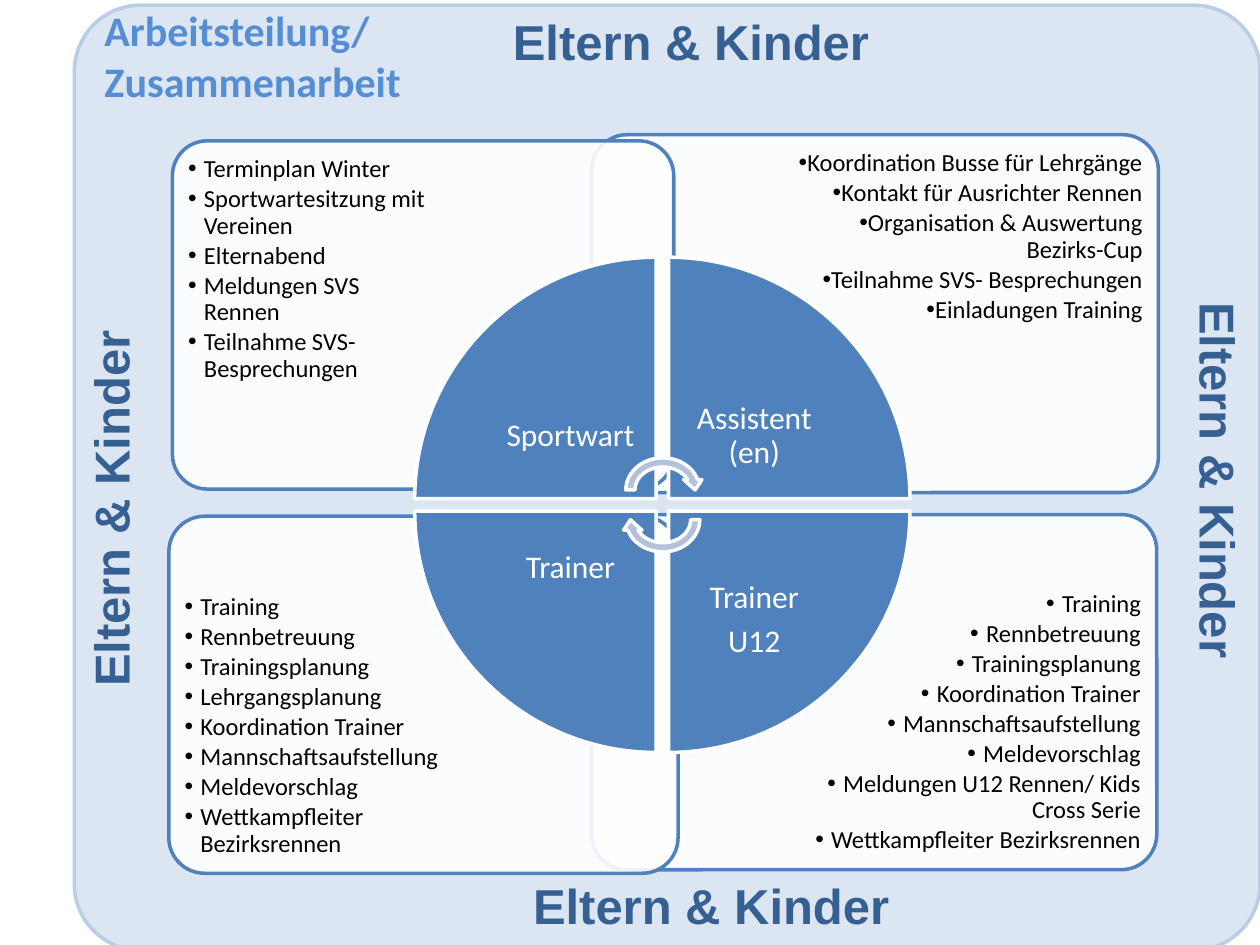
from lxml import etree
from pptx import Presentation
from pptx.dml.color import RGBColor
from pptx.enum import shapes, text
from pptx.oxml import ns
from pptx.util import Pt

# Content
TITLE = "Arbeitsteilung/\vZusammenarbeit"
BORDER = "Eltern & Kinder"
# left, top, width, height, rotation
EDGES = [
    (286, 3, 220, 44, 0),
    (-54, 262, 234, 41, 270),
    (579.5, 262, 234, 41, 90),
    (297.5, 497, 220, 44, 0),
]
# panel box, on the right, at the bottom, first-line indent, list
PANELS = [
    ((338, 294, 323, 203), True, True, -9, [
        "Training", "Rennbetreuung", "Trainingsplanung",
        "Koordination Trainer", "Mannschaftsaufstellung", "Meldevorschlag",
        "Meldungen U12 Rennen/ Kids Cross Serie",
        "Wettkampfleiter Bezirksrennen"]),
    ((96.5, 295, 291, 204), False, True, -9, [
        "Training", "Rennbetreuung", "Trainingsplanung", "Lehrgangsplanung",
        "Koordination Trainer", "Mannschaftsaufstellung", "Meldevorschlag",
        "Wettkampfleiter Bezirksrennen"]),
    ((338, 77, 324, 204.5), True, False, 0, [
        "Koordination Busse für Lehrgänge", "Kontakt für Ausrichter Rennen",
        "Organisation & Auswertung Bezirks-Cup",
        "Teilnahme SVS- Besprechungen", "Einladungen Training"]),
    ((98.5, 80.5, 286.5, 199), False, False, -9, [
        "Terminplan Winter", "Sportwartesitzung mit Vereinen", "Elternabend",
        "Meldungen SVS\vRennen", "Teilnahme SVS- Besprechungen"]),
]
# column, row, rotation, anchor, lines
ROLES = [
    (0, 0, 0, "MIDDLE", ["Sportwart"]),
    (1, 0, 90, "MIDDLE", ["Assistent (en)"]),
    (1, 1, 180, "MIDDLE", ["Trainer", "U12"]),
    (0, 1, 270, "TOP", ["Trainer"]),
]
ARROWS = [(259, 0), (276, 180)]

deck = Presentation()
deck.slide_width, deck.slide_height = Pt(720), Pt(540)
slide = deck.slides.add_slide(deck.slide_layouts[4])
tree = slide.shapes
title, *lists = slide.placeholders


def color(code):
    return RGBColor.from_string(code)


def place(item, box):
    item.left, item.top, item.width, item.height = map(Pt, box)


def draw(kind, box, fill, line, turn=0, alpha=None):
    item = tree.add_shape(kind, *map(Pt, box))
    item.shadow.inherit = False
    item.rotation = turn
    item.fill.solid()
    item.fill.fore_color.rgb = color(fill)
    item.line.color.rgb = color(line)
    item.line.width = Pt(2)
    if alpha:
        tint = item.element.spPr.find(".//" + ns.qn("a:srgbClr"))
        etree.SubElement(tint, ns.qn("a:alpha"), val=str(alpha * 1000))
    return item


def style(par, size, hue, font="Calibri", bold=False):
    for run in par.runs:
        run.font.name, run.font.size, run.font.bold = font, Pt(size), bold
        run.font.color.rgb = color(hue)


def space(par, after, align):
    par.line_spacing = 0.9
    par.space_before, par.space_after = Pt(0), Pt(after)
    par.alignment = align


def inset(frame, pad, top=None):
    frame.margin_left = frame.margin_right = frame.margin_bottom = Pt(pad)
    frame.margin_top = Pt(pad if top is None else top)


# Frame with the four border labels
ROUND = shapes.MSO_SHAPE.ROUNDED_RECTANGLE
frame = draw(ROUND, (42.5, 3, 677.5, 540), "DCE6F2", "B9CDE5")
frame.adjustments[0] = 0.07
for *box, turn in EDGES:
    label = tree.add_textbox(*map(Pt, box))
    label.rotation = turn
    label.text_frame.text = BORDER
    label.text_frame.word_wrap = False
    label.text_frame.auto_size = text.MSO_AUTO_SIZE.SHAPE_TO_FIT_TEXT
    style(label.text_frame.paragraphs[0], 28, "376092", "Arial", True)

# Title, above the frame
tree.element.append(title.element)
place(title, (52.5, -13.5, 636, 90))
title.text_frame.text = TITLE
title.text_frame.auto_size = text.MSO_AUTO_SIZE.NONE
title.text_frame.vertical_anchor = text.MSO_ANCHOR.MIDDLE
title.text_frame.paragraphs[0].alignment = text.PP_ALIGN.LEFT
style(title.text_frame.paragraphs[0], 24, "558ED5", bold=True)

# Panels, each with its list in the outer corner
PAD = 4.5
for body, (box, right, low, first, items) in zip(lists, PANELS):
    draw(ROUND, box, "FFFFFF", "4F81BD", alpha=90).adjustments[0] = 0.1
    x, y, w, h = box
    wide, high = w * 0.665, h * 0.705
    tree.element.append(body.element)
    place(body, (x + w - PAD - wide if right else x + PAD,
                 y + h - PAD - high if low else y + PAD, wide, high))
    area = body.text_frame
    area.text = "\n".join(items)
    area.word_wrap = True
    area.auto_size = text.MSO_AUTO_SIZE.NONE
    area.vertical_anchor = text.MSO_ANCHOR.BOTTOM if low else text.MSO_ANCHOR.TOP
    inset(area, PAD)
    for par in area.paragraphs:
        props = par._p.get_or_add_pPr()
        props.set("marL", str(Pt(9)))
        props.set("indent", str(Pt(first)))
        etree.SubElement(props, ns.qn("a:buFont"), typeface="Arial")
        etree.SubElement(props, ns.qn("a:buChar"), char="•")
        space(par, 2, text.PP_ALIGN.RIGHT if right else text.PP_ALIGN.LEFT)
        style(par, 14, "000000")

# Wheel of four roles
LEFT, TOP, SIDE, STEP, INNER = 237, 147, 138, 145, 98
for col, row, turn, anchor, lines in ROLES:
    x, y = LEFT + col * STEP, TOP + row * STEP
    draw(shapes.MSO_SHAPE.PIE_WEDGE, (x, y, SIDE, SIDE),
         "4F81BD", "FFFFFF", turn)
    gap = SIDE - INNER
    label = tree.add_textbox(*map(Pt, (x + gap * (1 - col),
                                       y + gap * (1 - row), INNER, INNER)))
    area = label.text_frame
    area.text = "\n".join(lines)
    area.word_wrap = True
    area.vertical_anchor = text.MSO_ANCHOR[anchor]
    inset(area, 10, 37)
    for par in area.paragraphs:
        space(par, 6, text.PP_ALIGN.CENTER)
        style(par, 18, "FFFFFF")

# Turning arrows at the hub
for y, turn in ARROWS:
    draw(shapes.MSO_SHAPE.CIRCULAR_ARROW, (355, y, 47.5, 42),
         "B3C1DB", "FFFFFF", turn)

deck.save("out.pptx")
